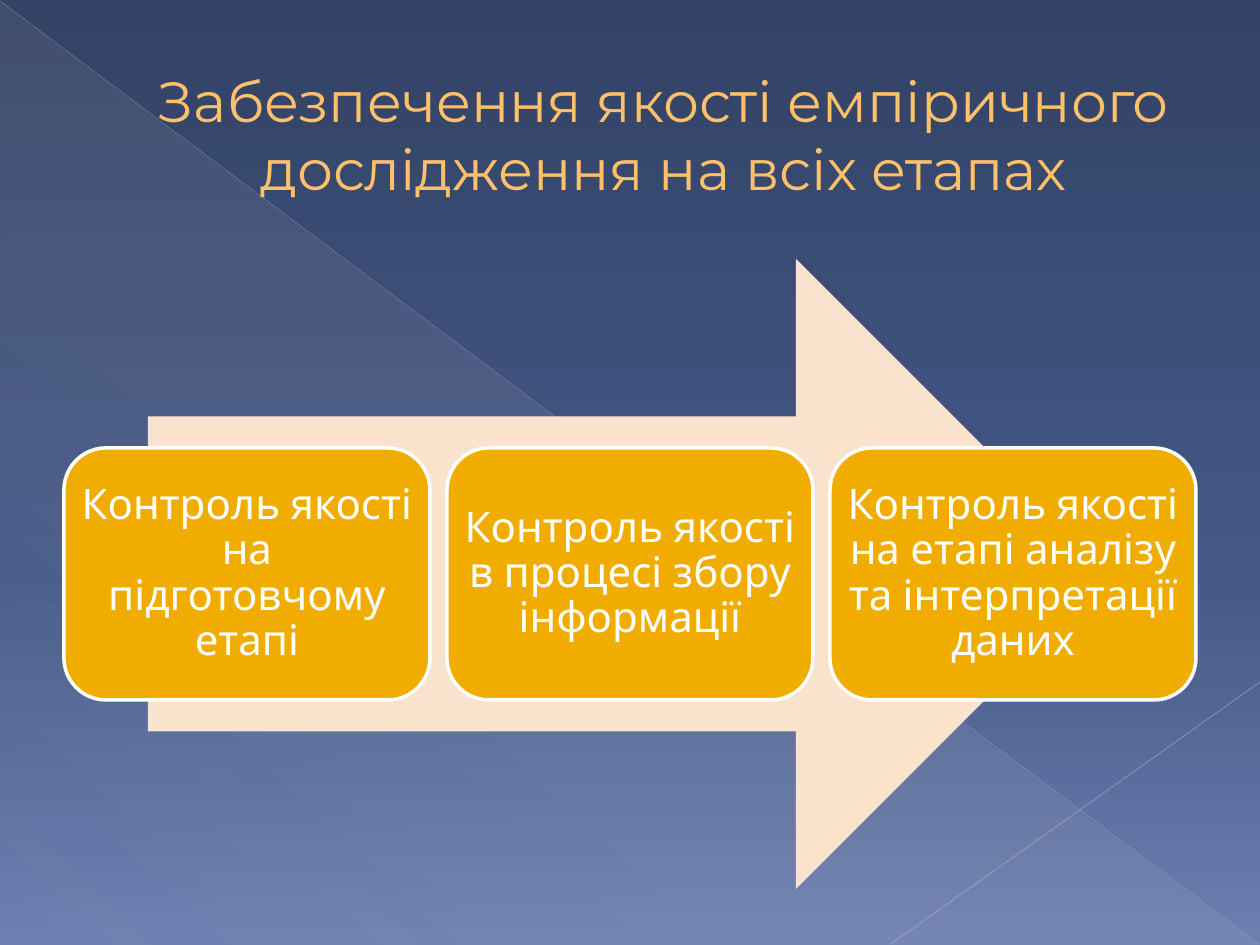
"""Build a slide showing quality control across three research stages."""
from lxml import etree
from pptx import Presentation
from pptx import util as u
from pptx.dml.color import RGBColor
from pptx.enum import shapes, text
from pptx.oxml.ns import qn

PX = 914400 / 126
COLORS = {
    "sky_top": "334265", "sky_mid": "445887", "sky_low": "6C7FB1",
    "veil": "D4D4D6", "diagonal": "B9BDC8", "corner": "C1C4CE",
    "title": "FFC06A", "arrow": "F9E3CC", "box": "F0AD00", "white": "FFFFFF",
}


def px(*lengths):
    return [u.Emu(round(n * PX)) for n in lengths]


def set_gradient(fill, element, angle, stops):
    fill.gradient()
    grad = element.find(".//" + qn("a:gradFill"))
    grad.find(qn("a:lin")).set("ang", str(angle * 60000))
    stop_list = grad.find(qn("a:gsLst"))
    stop_list.clear()
    for pos, color, opacity in stops:
        gs = etree.SubElement(stop_list, qn("a:gs"), pos=str(pos * 1000))
        clr = etree.SubElement(gs, qn("a:srgbClr"), val=COLORS[color])
        if opacity < 100:
            etree.SubElement(clr, qn("a:alpha"), val=str(opacity * 1000))


prs = Presentation()
prs.slide_width, prs.slide_height = px(1260, 945)
s = prs.slides.add_slide(prs.slide_layouts[5])
set_gradient(s.background.fill, s.element, 90,
             [(0, "sky_top", 100), (60, "sky_mid", 100), (100, "sky_low", 100)])

veil = s.shapes.add_shape(shapes.MSO_SHAPE.RIGHT_TRIANGLE, *px(1, 2, 1258, 943))
veil.shadow.inherit = False
veil.line.fill.background()
set_gradient(veil.fill, veil.element, 133,
             [(0, "veil", 10), (70, "veil", 8), (100, "veil", 1)])

for ends, color, width, opacity in [
    ((0, 1, 1259, 944), "diagonal", 0.39, 35),
    ((1260, 682, 891, 944), "corner", 0.47, 45),
]:
    line = s.shapes.add_connector(shapes.MSO_CONNECTOR.STRAIGHT, *px(*ends))
    line.line.width = u.Pt(width)
    line.line.color.rgb = RGBColor.from_string(COLORS[color])
    clr = line.element.spPr.find(".//" + qn("a:srgbClr"))
    etree.SubElement(clr, qn("a:alpha"), val=str(opacity * 1000))
    etree.SubElement(line.element.spPr, qn("a:effectLst"))

title = s.shapes.title
s.shapes.element.append(title.element)
title.left, title.top, title.width, title.height = px(63, 37, 1134, 193)
tf = title.text_frame
tf.text = "Забезпечення якості емпіричного дослідження на всіх етапах"
tf.word_wrap = True
tf.auto_size = text.MSO_AUTO_SIZE.NONE
tf.vertical_anchor = text.MSO_ANCHOR.MIDDLE
p = tf.paragraphs[0]
p.alignment = text.PP_ALIGN.CENTER
p._p.get_or_add_pPr().set("marL", str(px(67)[0]))
p.font.name, p.font.size = "Montserrat", u.Pt(32.4)
p.font.color.rgb = RGBColor.from_string(COLORS["title"])

arrow = s.shapes.add_shape(shapes.MSO_SHAPE.RIGHT_ARROW, *px(148, 259, 963, 630))
arrow.shadow.inherit = False
arrow.fill.solid()
arrow.fill.fore_color.rgb = RGBColor.from_string(COLORS["arrow"])
arrow.line.fill.background()

stages = [
    "Контроль якості на підготовчому етапі",
    "Контроль якості в процесі збору інформації",
    "Контроль якості на етапі аналізу та інтерпретації даних",
]
for i, stage in enumerate(stages):
    sp = s.shapes.add_shape(shapes.MSO_SHAPE.ROUNDED_RECTANGLE,
                            *px(64 + 383 * i, 448, 366, 252))
    sp.shadow.inherit = False
    sp.fill.solid()
    sp.fill.fore_color.rgb = RGBColor.from_string(COLORS["box"])
    sp.line.color.rgb = RGBColor.from_string(COLORS["white"])
    sp.line.width = u.Pt(2)
    tf = sp.text_frame
    tf.text = stage
    tf.word_wrap = True
    tf.vertical_anchor = text.MSO_ANCHOR.MIDDLE
    tf.margin_left = tf.margin_right = tf.margin_top = tf.margin_bottom = px(3)[0]
    p = tf.paragraphs[0]
    p.alignment = text.PP_ALIGN.CENTER
    p.line_spacing = 0.9
    p.font.name, p.font.size = "League Spartan", u.Pt(24)
    p.font.color.rgb = RGBColor.from_string(COLORS["white"])

prs.save("out.pptx")
